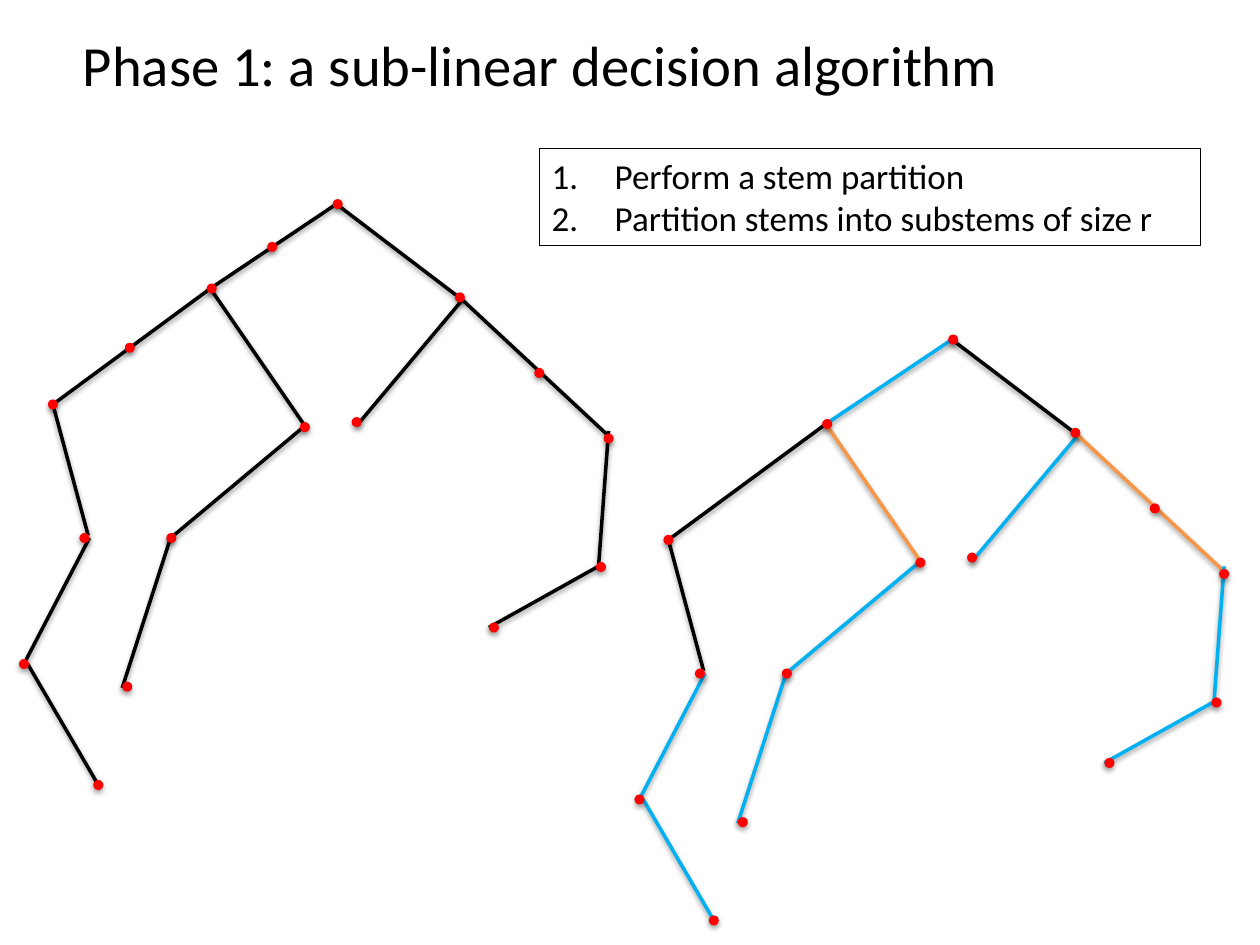
from dataclasses import dataclass

from lxml import etree
from pptx import Presentation
from pptx import util as u
from pptx.dml.color import RGBColor
from pptx.enum import shapes, text
from pptx.oxml import ns

COLORS = {"black": "000000", "blue": "00B0F0", "orange": "F79646", "red": "FF0000"}
FONT = "Calibri"
DOT_SIZE = 0.08
PARTITION_OFFSET = (4.885, 1.075)


@dataclass(frozen=True)
class Edge:
    start: tuple[float, float]
    end: tuple[float, float]
    partition_color: str


@dataclass(frozen=True)
class Dot:
    left: float
    top: float
    in_partition: bool = True


EDGES = [
    Edge((2.67, 1.62), (1.67, 2.29), "blue"),
    Edge((2.67, 1.62), (3.67, 2.38), "black"),
    Edge((1.67, 2.29), (0.42, 3.21), "black"),
    Edge((1.67, 2.29), (2.42, 3.38), "orange"),
    Edge((3.67, 2.38), (2.83, 3.38), "blue"),
    Edge((3.67, 2.38), (4.83, 3.46), "orange"),
    Edge((2.42, 3.38), (1.33, 4.29), "blue"),
    Edge((4.83, 3.42), (4.75, 4.5), "blue"),
    Edge((4.74, 4.5), (3.88, 4.98), "blue"),
    Edge((0.42, 3.21), (0.7, 4.25), "black"),
    Edge((0.71, 4.27), (0.2, 5.25), "blue"),
    Edge((0.22, 5.27), (0.78, 6.23), "blue"),
    Edge((1.36, 4.25), (0.97, 5.46), "blue"),
]

DOTS = [
    Dot(0.63, 4.23),
    Dot(1.64, 2.25),
    Dot(0.99, 2.72, in_partition=False),
    Dot(2.12, 1.92, in_partition=False),
    Dot(0.38, 3.17),
    Dot(0.15, 5.23),
    Dot(0.74, 6.19),
    Dot(2.38, 3.35),
    Dot(1.32, 4.23),
    Dot(0.97, 5.41),
    Dot(2.64, 1.58),
    Dot(3.61, 2.32),
    Dot(2.79, 3.31),
    Dot(4.79, 3.44),
    Dot(4.73, 4.46),
    Dot(3.88, 4.94),
    Dot(4.24, 2.92),
]


def rgb(name: str) -> RGBColor:
    return RGBColor.from_string(COLORS[name])


def add_shadow(shape, distance: float, opacity: int) -> None:
    effects = etree.SubElement(shape._element.spPr, ns.qn("a:effectLst"))
    shadow = etree.SubElement(
        effects, ns.qn("a:outerShdw"), blurRad=str(u.Pt(3.1)),
        dist=str(u.Pt(distance)), dir="5400000", rotWithShape="0",
    )
    color = etree.SubElement(shadow, ns.qn("a:srgbClr"), val=COLORS["black"])
    etree.SubElement(color, ns.qn("a:alpha"), val=str(opacity * 1000))


def draw_edge(slide, edge: Edge, offset: tuple[float, float], color: str) -> None:
    ends = [
        u.Inches(value + shift)
        for point in (edge.start, edge.end)
        for value, shift in zip(point, offset)
    ]
    connector = slide.shapes.add_connector(shapes.MSO_CONNECTOR.STRAIGHT, *ends)
    connector.line.color.rgb = rgb(color)
    connector.line.width = u.Pt(2)
    add_shadow(connector, 1.6, 38)


def draw_dot(slide, dot: Dot, offset: tuple[float, float]) -> None:
    shape = slide.shapes.add_shape(
        shapes.MSO_SHAPE.FLOWCHART_CONNECTOR,
        u.Inches(dot.left + offset[0]), u.Inches(dot.top + offset[1]),
        u.Inches(DOT_SIZE), u.Inches(DOT_SIZE),
    )
    shape.fill.solid()
    shape.fill.fore_color.rgb = rgb("red")
    shape.line.fill.background()
    add_shadow(shape, 1.8, 35)


def draw_tree(slide, offset: tuple[float, float], partitioned: bool) -> None:
    for edge in EDGES:
        draw_edge(slide, edge, offset, edge.partition_color if partitioned else "black")
    for dot in DOTS:
        if dot.in_partition or not partitioned:
            draw_dot(slide, dot, offset)


def add_text(slide, box: tuple[float, ...], lines: list[str], size: float):
    shape = slide.shapes.add_textbox(*map(u.Inches, box))
    frame = shape.text_frame
    frame.word_wrap = True
    frame.text = "\n".join(lines)
    for paragraph in frame.paragraphs:
        paragraph.font.name = FONT
        paragraph.font.size = u.Pt(size)
        paragraph.font.color.rgb = rgb("black")
    return shape


def draw_steps(slide, steps: list[str]) -> None:
    shape = add_text(slide, (4.28, 1.18, 5.25, 0.77), steps, 20)
    shape.line.color.rgb = rgb("black")
    shape.line.width = u.Pt(0.75)
    for paragraph in shape.text_frame.paragraphs:
        properties = paragraph._p.get_or_add_pPr()
        properties.set("marL", str(u.Inches(0.5)))
        properties.set("indent", str(u.Inches(-0.5)))
        numbering = etree.Element(ns.qn("a:buAutoNum"), type="arabicPeriod")
        properties.insert(0, numbering)


def main() -> None:
    presentation = Presentation()
    presentation.slide_width = u.Inches(10)
    presentation.slide_height = u.Inches(7.5)
    slide = presentation.slides.add_slide(presentation.slide_layouts[6])

    title = add_text(
        slide, (0.56, 0.21, 8.83, 0.6), ["Phase 1: a sub-linear decision algorithm"], 32.4
    )
    title.text_frame.vertical_anchor = text.MSO_ANCHOR.MIDDLE
    draw_steps(slide, ["Perform a stem partition", "Partition stems into substems of size r"])
    draw_tree(slide, (0, 0), partitioned=False)
    draw_tree(slide, PARTITION_OFFSET, partitioned=True)
    presentation.save("out.pptx")


if __name__ == "__main__":
    main()
